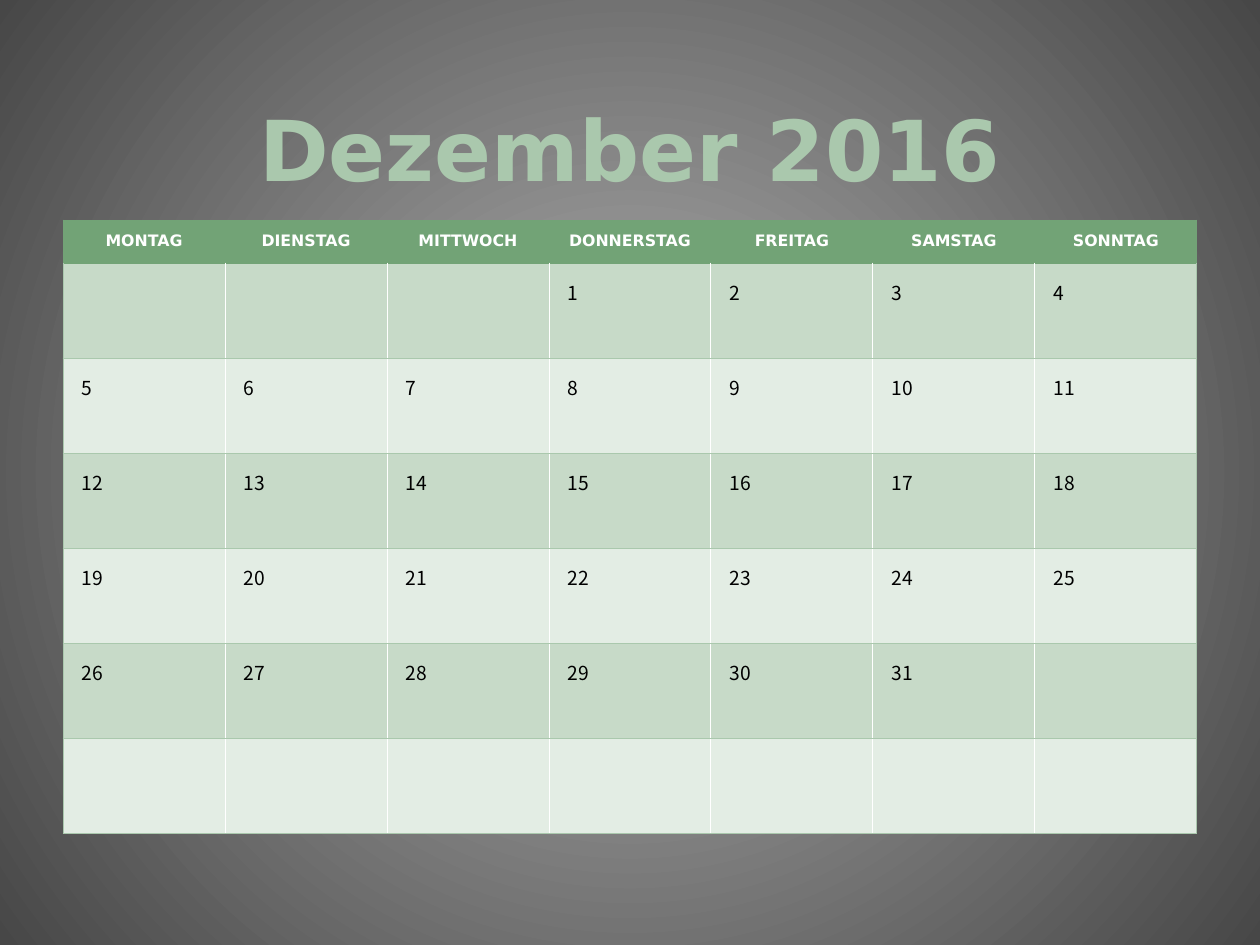
"""Build a one-slide calendar for December 2016."""
from lxml import etree
from pptx import Presentation
from pptx import util as u
from pptx.dml.color import RGBColor
from pptx.enum import text
from pptx.oxml.ns import qn

TITLE = "Dezember 2016"
WEEKDAYS = ["MONTAG", "DIENSTAG", "MITTWOCH", "DONNERSTAG", "FREITAG", "SAMSTAG", "SONNTAG"]
FIRST_COLUMN, DAYS, WEEKS = 3, 31, 6

WHITE = RGBColor(0xFF, 0xFF, 0xFF)
BLACK = RGBColor(0, 0, 0)
HEADER_GREEN = RGBColor(0x72, 0xA3, 0x76)
LINE_GREEN = RGBColor(0xAA, 0xC8, 0xAD)
BANDS = [RGBColor(0xC7, 0xDA, 0xC8), RGBColor(0xE3, 0xED, 0xE4)]
GLOW = [RGBColor(0xB1, 0xB1, 0xB1), RGBColor(0x47, 0x47, 0x47)]
HEADING_FONT, DAY_FONT = "DejaVu Sans", "Noto Sans CJK SC"

TITLE_BOX = (63, 42, 1134, 157)
TABLE_BOX = (63, 220, 1134, 614)
HEADER_HEIGHT = 43


def px(value):
    return u.Emu(round(value * 914400 / 126))


def paint_background(slide):
    fill = slide.background.fill
    fill.gradient()
    for stop, color, position in zip(fill.gradient_stops, GLOW, (0, 1)):
        stop.color.rgb = color
        stop.position = position
    gradient = slide.background._cSld.find(".//" + qn("a:gradFill"))
    linear = gradient.find(qn("a:lin"))
    radial = etree.Element(qn("a:path"), {"path": "circle"})
    etree.SubElement(radial, qn("a:fillToRect"), dict.fromkeys("ltrb", "50000"))
    gradient.replace(linear, radial)


def write(paragraph, words, size, font, color, bold):
    paragraph.text = words
    paragraph.font.size = u.Pt(size)
    paragraph.font.name = font
    paragraph.font.color.rgb = color
    paragraph.font.bold = bold


def set_borders(cell, **colors):
    properties = cell._tc.get_or_add_tcPr()
    for side in "LRTB":
        line = etree.SubElement(properties, qn("a:ln" + side), {"w": str(u.Pt(0.5))})
        if colors[side] is None:
            etree.SubElement(line, qn("a:noFill"))
        else:
            solid = etree.SubElement(line, qn("a:solidFill"))
            etree.SubElement(solid, qn("a:srgbClr"), {"val": str(colors[side])})


def style_cell(cell, row, column):
    header = row == 0
    edge = HEADER_GREEN if header else LINE_GREEN
    inner = None if header else WHITE
    set_borders(
        cell,
        L=edge if column == 0 else inner,
        R=edge if column == len(WEEKDAYS) - 1 else inner,
        T=HEADER_GREEN if row <= 1 else LINE_GREEN,
        B=edge,
    )
    cell.fill.solid()
    cell.fill.fore_color.rgb = HEADER_GREEN if header else BANDS[(row - 1) % 2]


def fill_cell(cell, row, column):
    paragraph = cell.text_frame.paragraphs[0]
    day = (row - 1) * len(WEEKDAYS) + column - FIRST_COLUMN + 1
    if row == 0:
        cell.vertical_anchor = text.MSO_ANCHOR.MIDDLE
        paragraph.alignment = text.PP_ALIGN.CENTER
        write(paragraph, WEEKDAYS[column], 9, HEADING_FONT, WHITE, True)
    elif 1 <= day <= DAYS:
        paragraph.line_spacing = 1.3
        paragraph._p.get_or_add_pPr().set("marL", str(px(6)))
        write(paragraph, str(day), 11, DAY_FONT, BLACK, False)


def add_title(slide):
    frame = slide.shapes.add_textbox(*map(px, TITLE_BOX)).text_frame
    frame.word_wrap = True
    frame.vertical_anchor = text.MSO_ANCHOR.BOTTOM
    frame.margin_bottom = px(1)
    paragraph = frame.paragraphs[0]
    paragraph.alignment = text.PP_ALIGN.CENTER
    write(paragraph, TITLE, 48, HEADING_FONT, LINE_GREEN, True)


def add_calendar(slide):
    shape = slide.shapes.add_table(WEEKS + 1, len(WEEKDAYS), *map(px, TABLE_BOX))
    table = shape.table
    table.horz_banding = False
    table.first_row = False
    for column in table.columns:
        column.width = px(TABLE_BOX[2] / len(WEEKDAYS))
    for index, row in enumerate(table.rows):
        row.height = px((TABLE_BOX[3] - HEADER_HEIGHT) / WEEKS if index else HEADER_HEIGHT)
        for position, cell in enumerate(row.cells):
            style_cell(cell, index, position)
            fill_cell(cell, index, position)


def main():
    presentation = Presentation()
    presentation.slide_width, presentation.slide_height = px(1260), px(945)
    slide = presentation.slides.add_slide(presentation.slide_layouts[6])
    paint_background(slide)
    add_title(slide)
    add_calendar(slide)
    presentation.save("out.pptx")


if __name__ == "__main__":
    main()
